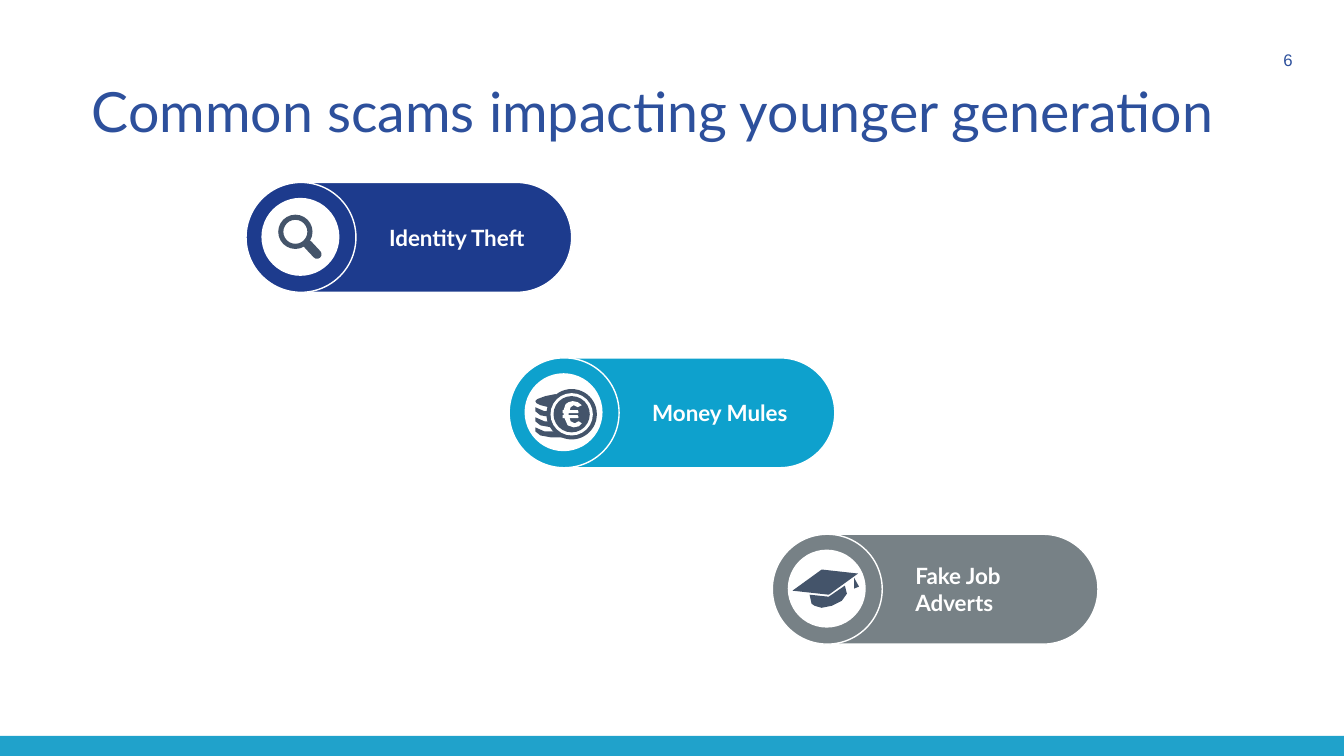
import pptx
import pptx.util
import pptx.dml.color
import pptx.enum.shapes
import pptx.enum.text

PX = 9144
INK = "44546A"
WHITE = "FFFFFF"
KIND = pptx.enum.shapes.MSO_SHAPE
ALIGN = pptx.enum.text.PP_ALIGN
ANCHOR = pptx.enum.text.MSO_ANCHOR

CARDS = [
    ("Identity Theft", "1D3B8D"),
    ("Money Mules", "0EA1CD"),
    ("Fake Job Adverts", "778186"),
]
COIN = [(551, 391), (541, 393), (533, 396), (531, 398), (532, 400),
        (536, 402), (544, 404), (560, 404)]
SLAB = [(531, 0), (540, 4), (550, 4), (558, 10), (547, 10), (536, 8), (531, 4)]
EURO = [(577, 402), (573, 404), (569, 402), (566, 404), (565, 407), (573, 407),
        (574, 409), (573, 410), (564, 410), (564, 412), (573, 412), (574, 414),
        (573, 415), (565, 415), (566, 418), (570, 420), (574, 418), (577, 420),
        (574, 423), (569, 424), (563, 422), (560, 415), (558, 415), (558, 412),
        (559, 412), (559, 410), (558, 410), (558, 407), (559, 407), (561, 401),
        (564, 399), (568, 398), (573, 399)]
TASSEL = [(847, 573), (852, 582), (847, 584)]
BOARD = [(815, 565), (786, 586), (822, 590), (851, 569)]
BASE = [(822, 592), (803, 590), (805, 599), (808, 601), (815, 603), (825, 601),
        (835, 596), (840, 589), (838, 581)]


def color(code):
    return pptx.dml.color.RGBColor.from_string(code)


def write(shape, text, size, font="Lato", ink=WHITE, bold=False, align=ALIGN.LEFT,
          anchor=ANCHOR.MIDDLE, inset=(10, 5, 10, 5), space=1.0):
    frame = shape.text_frame
    frame.word_wrap = True
    frame.vertical_anchor = anchor
    (frame.margin_left, frame.margin_top,
     frame.margin_right, frame.margin_bottom) = [n * PX for n in inset]
    para = frame.paragraphs[0]
    para.alignment = align
    para.line_spacing = space
    run = para.add_run()
    run.text = text
    run.font.size = pptx.util.Pt(size)
    run.font.name = font
    run.font.bold = bold
    run.font.color.rgb = color(ink)


def label(slide, box, text, size, **style):
    write(slide.shapes.add_textbox(*[n * PX for n in box]), text, size, **style)


def paint(shape, fill, line=None, width=1):
    shape.shadow.inherit = False
    shape.fill.solid()
    shape.fill.fore_color.rgb = color(fill)
    if line:
        shape.line.color.rgb = color(line)
        shape.line.width = pptx.util.Pt(width)
    else:
        shape.line.fill.background()


def draw(slide, kind, box, fill, line=None, width=1):
    shape = slide.shapes.add_shape(kind, *[n * PX for n in box])
    paint(shape, fill, line, width)
    return shape


def trace(slide, points, fill=INK):
    pen = slide.shapes.build_freeform(*points[0], scale=PX)
    pen.add_line_segments(points[1:], close=True)
    paint(pen.convert_to_shape(), fill)


def card(slide, x, y, text, fill):
    pill = draw(slide, KIND.ROUNDED_RECTANGLE, (x + 16, y, 307, 109), fill, WHITE)
    pill.adjustments[0] = 0.5
    write(pill, text, 16, bold=True, inset=(110, 5, 10, 5))
    draw(slide, KIND.OVAL, (x, y, 109, 109), fill, WHITE)
    draw(slide, KIND.OVAL, (x + 16, y + 16, 76, 76), WHITE, WHITE)


def lens(slide):
    ring = draw(slide, KIND.DONUT, (276, 213, 34, 34), INK)
    ring.adjustments[0] = 0.15
    grip = draw(slide, KIND.ROUNDED_RECTANGLE, (299, 243, 22, 9), INK)
    grip.adjustments[0] = 0.5
    grip.rotation = 47


def coins(slide):
    trace(slide, COIN)
    for top in (404, 414, 424):
        trace(slide, [(x, top + y) for x, y in SLAB])
    for edge, fill in ((0, INK), (4, WHITE), (7, INK)):
        size = 50 - 2 * edge
        draw(slide, KIND.OVAL, (542 + edge, 386 + edge, size, size), fill)
    trace(slide, EURO, WHITE)


def cap(slide):
    for part in (TASSEL, BOARD, BASE):
        trace(slide, part)


def main():
    deck = pptx.Presentation()
    deck.slide_width = 1333 * PX
    deck.slide_height = 750 * PX
    slide = deck.slides.add_slide(deck.slide_layouts[6])
    label(slide, (1234, 39, 48, 30), "6", 12, font="Arial", ink="2D509C",
          align=ALIGN.RIGHT, anchor=ANCHOR.BOTTOM, inset=(0, 0, 0, 0))
    label(slide, (81, 94, 1252, 40), "Common scams impacting younger generation",
          39.6, ink="2D509C", space=0.9)
    for i, (text, fill) in enumerate(CARDS):
        card(slide, 244 + 261 * i, 181 + 349 * i // 2, text, fill)
    lens(slide)
    cap(slide)
    coins(slide)
    draw(slide, KIND.RECTANGLE, (0, 730, 1333, 20), "20A2CB")
    deck.save("out.pptx")


if __name__ == "__main__":
    main()
